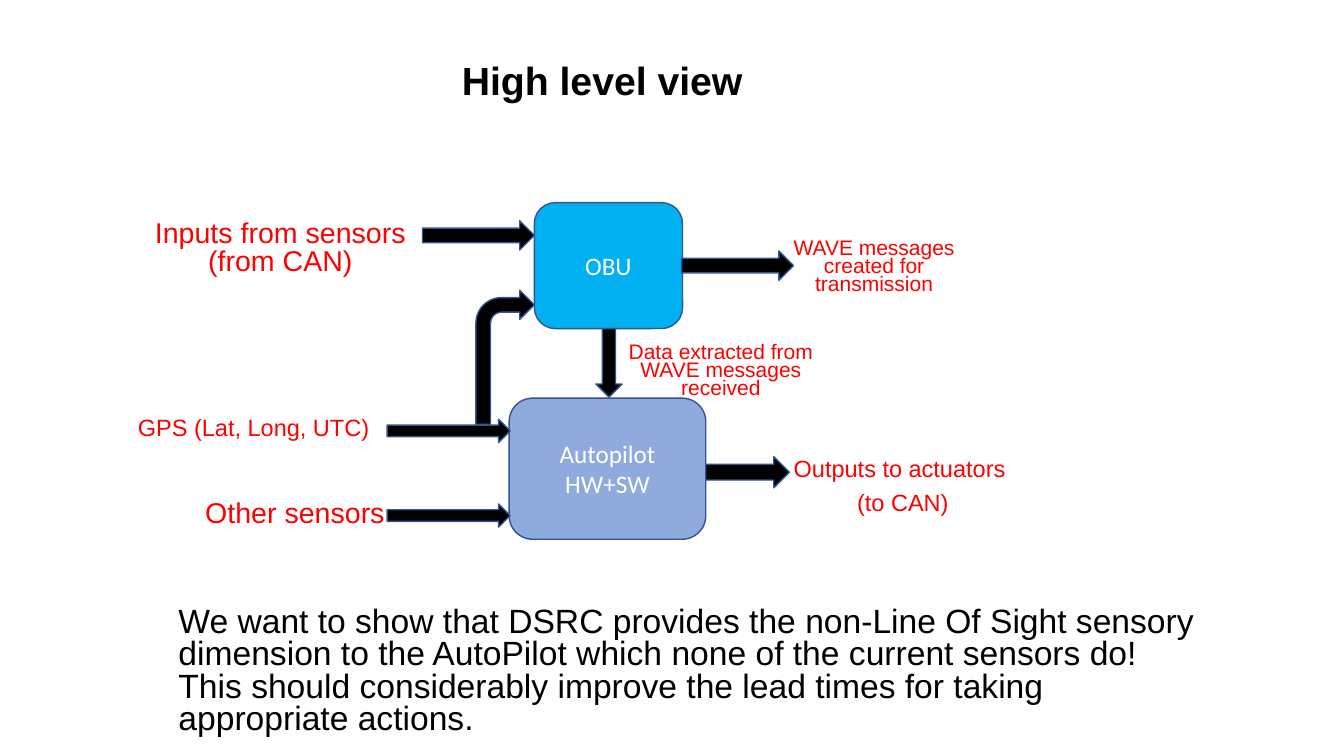
from dataclasses import dataclass

from lxml.etree import SubElement
from pptx import Presentation
from pptx.dml.color import RGBColor
from pptx.enum.shapes import MSO_SHAPE as SHAPE
from pptx.enum.text import MSO_ANCHOR as ANCHOR, MSO_AUTO_SIZE as AUTO, PP_ALIGN as ALIGN
from pptx.oxml.ns import qn
from pptx.util import Inches, Pt


@dataclass(frozen=True)
class Theme:
    ink: str = "000000"
    label: str = "FF0000"
    box_text: str = "FFFFFF"
    outline: str = "325491"
    obu: str = "00B0F0"
    autopilot: str = "8FAADC"
    text_font: str = "Arial"
    box_font: str = "Calibri"
    title_size: float = 28
    statement_size: float = 24
    large: float = 20.4
    box_size: float = 18
    medium: float = 16.8
    small: float = 15


THEME = Theme()

# name, fill, place
BOXES = [
    ("Autopilot HW+SW", THEME.autopilot, (5.05, 3.95, 1.95, 1.4)),
    ("OBU", THEME.obu, (5.3, 2.01, 1.47, 1.25)),
]
ARROWS = [
    (SHAPE.RIGHT_ARROW, (3.84, 5, 1.22, 0.23)),
    (SHAPE.RIGHT_ARROW, (3.84, 4.16, 1.22, 0.23)),
    (SHAPE.DOWN_ARROW, (5.91, 3.26, 0.26, 0.68)),
    (SHAPE.RIGHT_ARROW, (4.19, 2.19, 1.11, 0.29)),
    (SHAPE.RIGHT_ARROW, (7, 4.53, 0.83, 0.31)),
    (SHAPE.BENT_ARROW, (4.72, 2.88, 0.58, 1.33)),
    (SHAPE.RIGHT_ARROW, (6.76, 2.49, 1.11, 0.29)),
]
# paragraphs, size, line spacing, place
LABELS = [
    (["GPS (Lat, Long, UTC)"], THEME.medium, 0.7, (1.19, 4.12, 2.65, 0.48)),
    (["Inputs from sensors (from CAN)"], THEME.large, 0.8, (1.39, 2.15, 2.78, 0.82)),
    (["Other sensors"], THEME.large, 0.8, (1.88, 4.93, 2.09, 0.59)),
    (["Outputs to actuators ", "(to CAN)"], THEME.medium, 0.7, (7.73, 4.53, 2.45, 0.79)),
    (["Data extracted from WAVE messages received"], THEME.small, 0.7,
     (6.07, 3.38, 2.16, 0.66)),
    (["WAVE messages created for transmission"], THEME.small, 0.7,
     (7.59, 2.35, 2.16, 0.66)),
]
STATEMENT = (
    "We want to show that DSRC provides the non-Line Of Sight sensory dimension "
    "to the AutoPilot which none of the current sensors do! This should considerably "
    "improve the lead times for taking appropriate actions."
)


def set_all(target, values):
    for name, value in values.items():
        setattr(target, name, value)


def inches(place):
    return [Inches(v) for v in place]


def move(sp, place):
    set_all(sp, dict(zip(("left", "top", "width", "height"), inches(place))))


def write(tf, lines, color, size, font=THEME.text_font, bold=False, **layout):
    """Fill a text frame; layout holds paragraph attributes."""
    for i, line in enumerate(lines):
        p = tf.add_paragraph() if i else tf.paragraphs[0]
        set_all(p, layout)
        r = p.add_run()
        r.text = line
        set_all(r.font, {"name": font, "size": Pt(size), "bold": bold})
        r.font.color.rgb = RGBColor.from_string(color)


def add_solid(slide, kind, fill, place):
    sp = slide.shapes.add_shape(kind, *inches(place))
    sp.shadow.inherit = False
    sp.fill.solid()
    sp.fill.fore_color.rgb = RGBColor.from_string(fill)
    sp.line.color.rgb = RGBColor.from_string(THEME.outline)
    sp.line.width = Pt(1)
    return sp


def add_box(slide, name, fill, place):
    tf = add_solid(slide, SHAPE.ROUNDED_RECTANGLE, fill, place).text_frame
    set_all(tf, {"word_wrap": True, "vertical_anchor": ANCHOR.MIDDLE})
    write(tf, [name], THEME.box_text, THEME.box_size, THEME.box_font,
          alignment=ALIGN.CENTER)


def add_label(slide, lines, size, spacing, place):
    tf = slide.shapes.add_textbox(*inches(place)).text_frame
    tf.word_wrap = True
    write(tf, lines, THEME.label, size, alignment=ALIGN.CENTER,
          line_spacing=spacing, space_before=Pt(10))


def set_title(slide):
    sp = slide.shapes.title
    move(sp, (4.48, 0.51, 3.13, 0.57))
    set_all(sp.text_frame, {"word_wrap": False, "auto_size": AUTO.NONE,
                            "vertical_anchor": ANCHOR.MIDDLE})
    write(sp.text_frame, ["High level view"], THEME.ink, THEME.title_size, bold=True,
          alignment=ALIGN.LEFT)


def set_statement(slide):
    """Put the closing statement in the body placeholder, without a bullet."""
    sp = slide.placeholders[1]
    move(sp, (1.67, 5.98, 10.28, 1.49))
    tf = sp.text_frame
    set_all(tf, {"word_wrap": True, "auto_size": AUTO.NONE, "vertical_anchor": ANCHOR.TOP})
    write(tf, [STATEMENT], THEME.ink, THEME.statement_size, alignment=ALIGN.LEFT,
          line_spacing=0.8, space_before=Pt(10))
    pPr = tf.paragraphs[0]._p.get_or_add_pPr()
    pPr.set("marL", "0")
    pPr.set("indent", "0")
    SubElement(pPr, qn("a:buNone"))


def main():
    prs = Presentation()
    set_all(prs, {"slide_width": Inches(13.33), "slide_height": Inches(7.5)})
    slide = prs.slides.add_slide(prs.slide_layouts[1])
    set_title(slide)
    for box in BOXES:
        add_box(slide, *box)
    for kind, place in ARROWS:
        add_solid(slide, kind, THEME.ink, place)
    for label in LABELS:
        add_label(slide, *label)
    set_statement(slide)
    prs.save("out.pptx")


if __name__ == "__main__":
    main()
